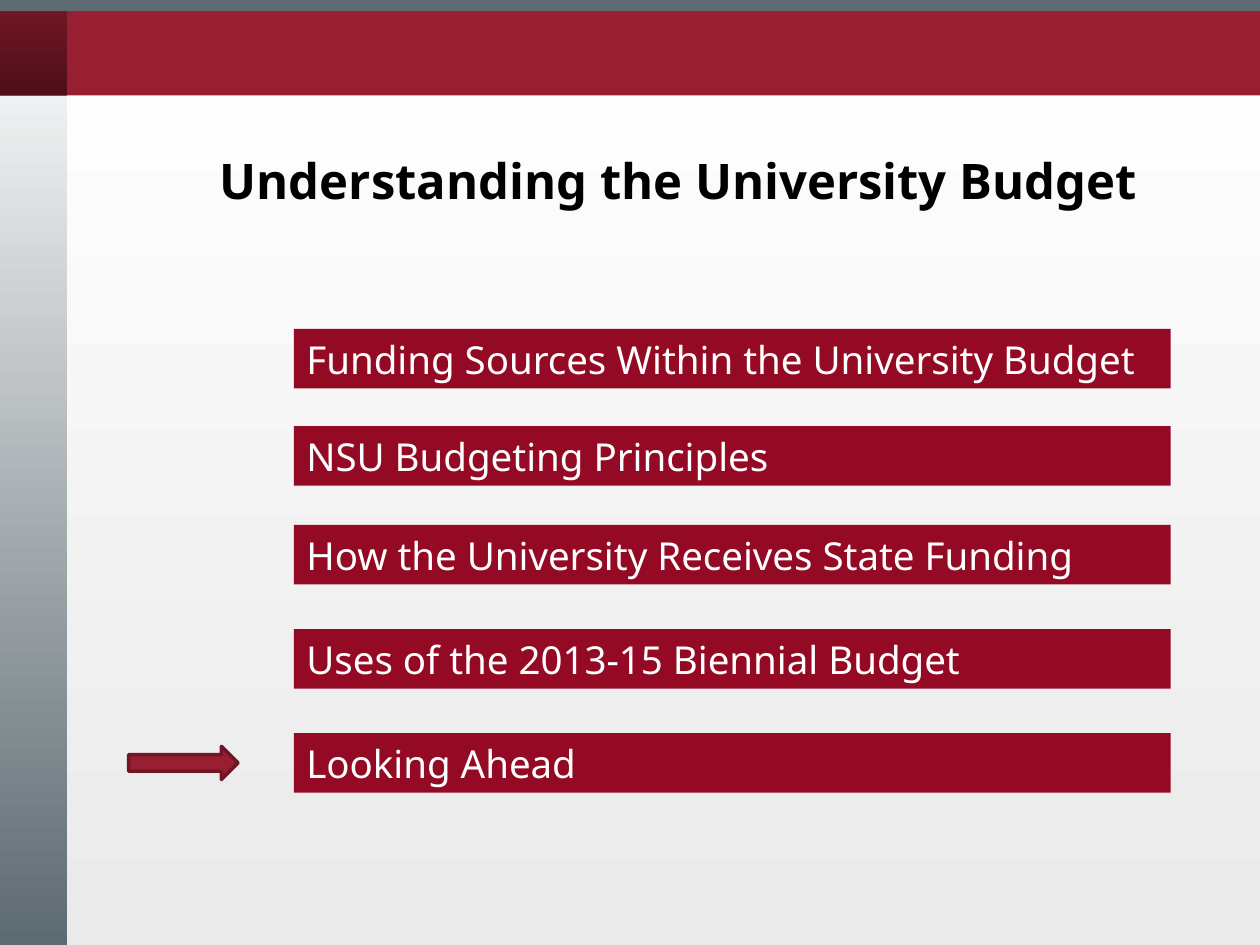
from pptx import Presentation
from pptx.dml.color import RGBColor as RGB
from pptx.enum.shapes import MSO_SHAPE as Shape
from pptx.enum.text import MSO_ANCHOR as Anchor, PP_ALIGN as Align
from pptx.oxml.ns import qn
from pptx.util import Pt
from lxml.etree import SubElement

COLORS = {
    "slate": "5E6A71", "crimson": "981E32", "topic": "940924", "outline": "701625",
    "mist": "EAEAEA", "white": "FFFFFF", "black": "000000",
}
WIDTH, HEIGHT = 720, 540
TOPICS = [
    (188, "Funding Sources Within the University Budget"),
    (243.5, "NSU Budgeting Principles"),
    (300, "How the University Receives State Funding"),
    (359.5, "Uses of the 2013-15 Biennial Budget"),
    (419, "Looking Ahead"),
]


class Deck:
    font = "Noto Sans"

    def __init__(self):
        self.presentation = Presentation()
        self.presentation.slide_width, self.presentation.slide_height = Pt(WIDTH), Pt(HEIGHT)
        self.slide = self.presentation.slides.add_slide(self.presentation.slide_layouts[6])

    def gradient(self, fill, bottom, top, alphas=()):
        """Blend upwards from bottom to top; alphas are opacities in percent."""
        fill.gradient()
        fill.gradient_angle = 90
        for stop, color in zip(fill.gradient_stops, (bottom, top)):
            stop.color.rgb = RGB.from_string(COLORS[color])
        tints = fill._xPr.iter(qn("a:srgbClr"))
        for tint, alpha in zip(tints, alphas):
            SubElement(tint, qn("a:alpha"), val=str(alpha * 1000))

    def shape(self, left, top, width, height, color=None, kind=Shape.RECTANGLE, outline=None):
        shape = self.slide.shapes.add_shape(kind, Pt(left), Pt(top), Pt(width), Pt(height))
        shape.shadow.inherit = False
        if color:
            shape.fill.solid()
            shape.fill.fore_color.rgb = RGB.from_string(COLORS[color])
        if outline:
            shape.line.color.rgb = RGB.from_string(COLORS[outline])
            shape.line.width = Pt(2)
        else:
            shape.line.fill.background()
        return shape

    def set_text(self, frame, text, size, color, align=Align.LEFT, bold=False):
        frame.word_wrap = True
        frame.vertical_anchor = Anchor.MIDDLE
        frame.text = text
        paragraph = frame.paragraphs[0]
        paragraph.alignment = align
        font = paragraph.runs[0].font
        font.name, font.size, font.bold = self.font, Pt(size), bold
        font.color.rgb = RGB.from_string(COLORS[color])

    def title(self, text):
        box = self.slide.shapes.add_textbox(Pt(73.5), Pt(80), Pt(628), Pt(46))
        self.set_text(box.text_frame, text, 28, "black", Align.CENTER, bold=True)

    def topic(self, top, text):
        bar = self.shape(168, top, 501, 34, "topic")
        self.set_text(bar.text_frame, text, 22, "white")

    def frame(self):
        """Draw the background, side bar and header bands."""
        side, strip, header = 38.2, 6.4, 48.2
        self.gradient(self.slide.background.fill, "mist", "white")
        self.gradient(self.shape(0, 0, side, HEIGHT).fill, "slate", "white")
        self.shape(0, strip, WIDTH, header, "crimson")
        corner = self.shape(0, strip, side, header)
        self.gradient(corner.fill, "black", "black", alphas=(50, 25))
        self.shape(0, 0, WIDTH, strip, "slate")


def main():
    deck = Deck()
    deck.frame()
    deck.title("Understanding the University Budget")
    for top, text in TOPICS:
        deck.topic(top, text)
    deck.shape(73.5, 426.5, 62.5, 19, "crimson", Shape.RIGHT_ARROW, "outline")
    deck.presentation.save("out.pptx")


if __name__ == "__main__":
    main()
